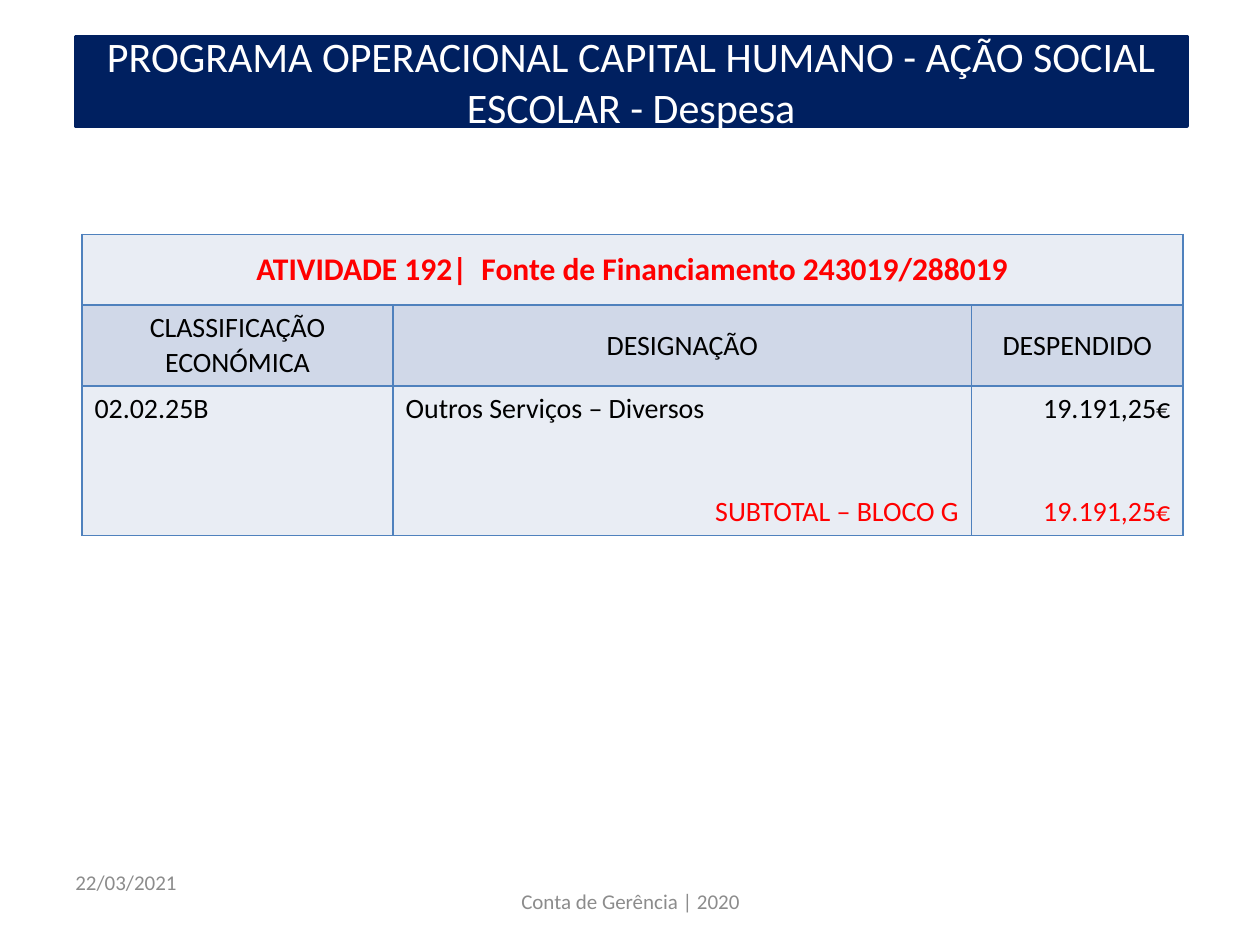
from lxml.etree import SubElement
from pptx import Presentation
from pptx.dml.color import RGBColor
from pptx.enum.text import MSO_ANCHOR as Anchor, MSO_AUTO_SIZE as AutoSize, PP_ALIGN as Align
from pptx.oxml import parse_xml
from pptx.oxml.ns import nsdecls, qn
from pptx.util import Inches, Pt

FONT = "Calibri"
NAVY, BLUE, RED = "002060", "4F81BD", "FF0000"
BLACK, WHITE, GREY = "000000", "FFFFFF", "8C8C8C"
PALE, BAND = "E9EDF4", "D0D8E8"
SUBTOTAL_GAP = 39


def colour(hex_value):
    return RGBColor.from_string(hex_value)


def write(text_frame, lines, size, align=Align.LEFT, bold=False):
    """Write (text, colour) lines, one paragraph each."""
    for index, (text, text_colour) in enumerate(lines):
        paragraph = text_frame.add_paragraph() if index else text_frame.paragraphs[0]
        paragraph.text = text
        paragraph.alignment = align
        for run in paragraph.runs:
            run.font.name, run.font.size, run.font.bold = FONT, Pt(size), bold
            run.font.color.rgb = colour(text_colour)


def add_banner(slide, box):
    """Title placeholder shaped as a rounded bar."""
    title = slide.shapes.title
    title.left, title.top, title.width, title.height = map(Inches, box)
    title._element.spPr.find(qn("a:xfrm")).addnext(parse_xml(
        f'<a:prstGeom {nsdecls("a")} prst="roundRect"><a:avLst/></a:prstGeom>'))
    title.fill.solid()
    title.fill.fore_color.rgb = colour(NAVY)
    title.line.color.rgb = colour(NAVY)
    title.line.width = Pt(2)
    title.text_frame.auto_size = AutoSize.NONE
    title.text_frame.vertical_anchor = Anchor.MIDDLE
    heading = "PROGRAMA OPERACIONAL CAPITAL HUMANO - AÇÃO SOCIAL ESCOLAR - Despesa"
    write(title.text_frame, [(heading, WHITE)], 24, Align.CENTER)


def format_cell(cell, fill, anchor):
    cell.fill.solid()
    cell.fill.fore_color.rgb = colour(fill)
    cell.vertical_anchor = anchor
    properties = cell._tc.get_or_add_tcPr()
    # Borders come before the fill
    for index, side in enumerate(("lnL", "lnR", "lnT", "lnB")):
        border = parse_xml(f'<a:{side} {nsdecls("a")} w="{Pt(1)}"/>')
        SubElement(SubElement(border, qn("a:solidFill")), qn("a:srgbClr"), val=BLUE)
        properties.insert(index, border)


def add_expense_table(slide, box, columns, rows):
    table = slide.shapes.add_table(len(rows), len(columns), *map(Inches, box)).table
    for column, width in zip(table.columns, columns):
        column.width = Inches(width)
    for row, height in zip(table.rows, rows):
        row.height = Inches(height)
    styles = [(PALE, Anchor.MIDDLE), (BAND, Anchor.MIDDLE), (PALE, Anchor.TOP)]
    for row, style in zip(table.rows, styles):
        for cell in row.cells:
            format_cell(cell, *style)

    # Heading across all columns
    table.cell(0, 0).merge(table.cell(0, len(columns) - 1))
    heading = "ATIVIDADE 192|  Fonte de Financiamento 243019/288019"
    write(table.cell(0, 0).text_frame, [(heading, RED)], 18, Align.CENTER, bold=True)

    # Column labels
    labels = [("CLASSIFICAÇÃO", "ECONÓMICA"), ("DESIGNAÇÃO",), ("DESPENDIDO",)]
    for cell, lines in zip(table.rows[1].cells, labels):
        write(cell.text_frame, [(line, BLACK) for line in lines], 16, Align.CENTER)

    # Expense and subtotal
    code, designation, amount = (cell.text_frame for cell in table.rows[2].cells)
    write(code, [("02.02.25B", BLACK)], 16)
    write(designation, [("Outros Serviços – Diversos", BLACK), ("SUBTOTAL – BLOCO G", RED)], 16)
    write(amount, [("19.191,25€", BLACK), ("19.191,25€", RED)], 16, Align.RIGHT)
    designation.paragraphs[1].alignment = Align.RIGHT
    for text_frame in (designation, amount):
        text_frame.paragraphs[1].space_before = Pt(SUBTOTAL_GAP)


def add_footer_text(slide, box, text, align):
    text_frame = slide.shapes.add_textbox(*map(Inches, box)).text_frame
    text_frame.word_wrap = True
    text_frame.vertical_anchor = Anchor.MIDDLE
    write(text_frame, [(text, GREY)], 12, align)


def main():
    presentation = Presentation()
    presentation.slide_width, presentation.slide_height = Inches(10), Inches(7.5)
    slide = presentation.slides.add_slide(presentation.slide_layouts[5])
    add_banner(slide, (0.6, 0.29, 8.82, 0.71))
    add_expense_table(slide, (0.65, 1.86, 8.74, 2.36), (2.47, 4.59, 1.68), (0.56, 0.63, 1.17))
    add_footer_text(slide, (0.5, 6.8, 2.33, 0.4), "22/03/2021", Align.LEFT)
    add_footer_text(slide, (3.42, 6.95, 3.17, 0.4), "Conta de Gerência | 2020", Align.CENTER)
    presentation.save("out.pptx")


if __name__ == "__main__":
    main()
